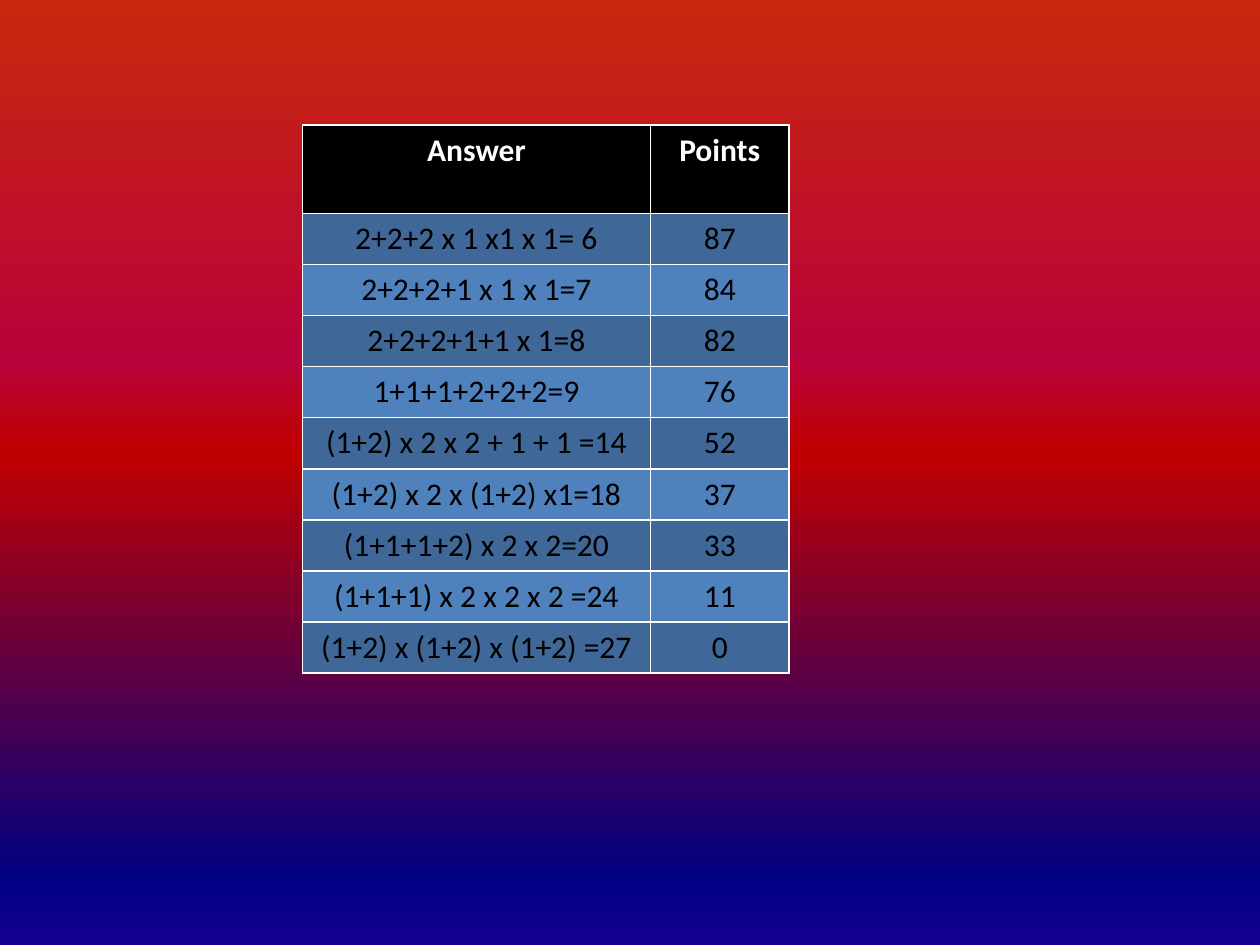
"""Build a slide with a table of answers and points on a gradient background."""
from lxml import etree
from pptx import Presentation, util as u
from pptx.dml.color import RGBColor
from pptx.enum import text
from pptx.oxml.ns import qn

HEADER = ("Answer", "Points")
ANSWERS = [
    ("2+2+2 x 1 x1 x 1= 6", 87),
    ("2+2+2+1 x 1 x 1=7", 84),
    ("2+2+2+1+1 x 1=8", 82),
    ("1+1+1+2+2+2=9", 76),
    ("(1+2) x 2 x 2 + 1 + 1 =14", 52),
    ("(1+2) x 2 x (1+2) x1=18", 37),
    ("(1+1+1+2) x 2 x 2=20", 33),
    ("(1+1+1) x 2 x 2 x 2 =24", 11),
    ("(1+2) x (1+2) x (1+2) =27", 0),
]
GRADIENT = [(0, "C9280D"), (38, "B8023A"), (48, "C00000"), (93, "000082"), (100, "150090")]
BANDS = ("3F6797", "4F81BD")
LEFT, TOP = 6.1, 2.52
COL_WIDTHS = (7.01, 2.8)
HEADER_HEIGHT, ROW_HEIGHT = 1.78, 1.03


def rgb(value):
    return RGBColor.from_string(value)


def set_background(s):
    fill = s.background.fill
    fill.gradient()
    fill.gradient_angle = 270
    stops = next(s.element.iter(qn("a:gsLst")))
    stops.clear()
    for pos, color in GRADIENT:
        gs = etree.SubElement(stops, qn("a:gs"), pos=str(pos * 1000))
        etree.SubElement(gs, qn("a:srgbClr"), val=color)


def set_borders(cell, color="FFFFFF", width=1):
    tc_pr = cell._tc.get_or_add_tcPr()
    for side in "LRTB":
        ln = etree.SubElement(tc_pr, qn(f"a:ln{side}"), w=str(u.Pt(width)))
        fill = etree.SubElement(ln, qn("a:solidFill"))
        etree.SubElement(fill, qn("a:srgbClr"), val=color)


def fill_cell(cell, value, back, fore, bold):
    set_borders(cell)
    cell.fill.solid()
    cell.fill.fore_color.rgb = rgb(back)
    p = cell.text_frame.paragraphs[0]
    p.text = str(value)
    p.alignment = text.PP_ALIGN.CENTER
    p.font.name, p.font.size, p.font.bold = "Calibri", u.Pt(18), bold
    p.font.color.rgb = rgb(fore)


def add_answers(s):
    rows = [HEADER, *ANSWERS]
    heights = [HEADER_HEIGHT] + [ROW_HEIGHT] * len(ANSWERS)
    box = (LEFT, TOP, sum(COL_WIDTHS), sum(heights))
    table = s.shapes.add_table(len(rows), len(HEADER), *map(u.Cm, box)).table
    for column, width in zip(table.columns, COL_WIDTHS):
        column.width = u.Cm(width)
    for i, (row, height) in enumerate(zip(rows, heights)):
        table.rows[i].height = u.Cm(height)
        style = (BANDS[(i - 1) % 2], "000000", False) if i else ("000000", "FFFFFF", True)
        for j, value in enumerate(row):
            fill_cell(table.cell(i, j), value, *style)


def main():
    prs = Presentation()
    prs.slide_width, prs.slide_height = u.Cm(25.4), u.Cm(19.05)
    s = prs.slides.add_slide(prs.slide_layouts[6])
    set_background(s)
    add_answers(s)
    prs.save("out.pptx")


if __name__ == "__main__":
    main()
